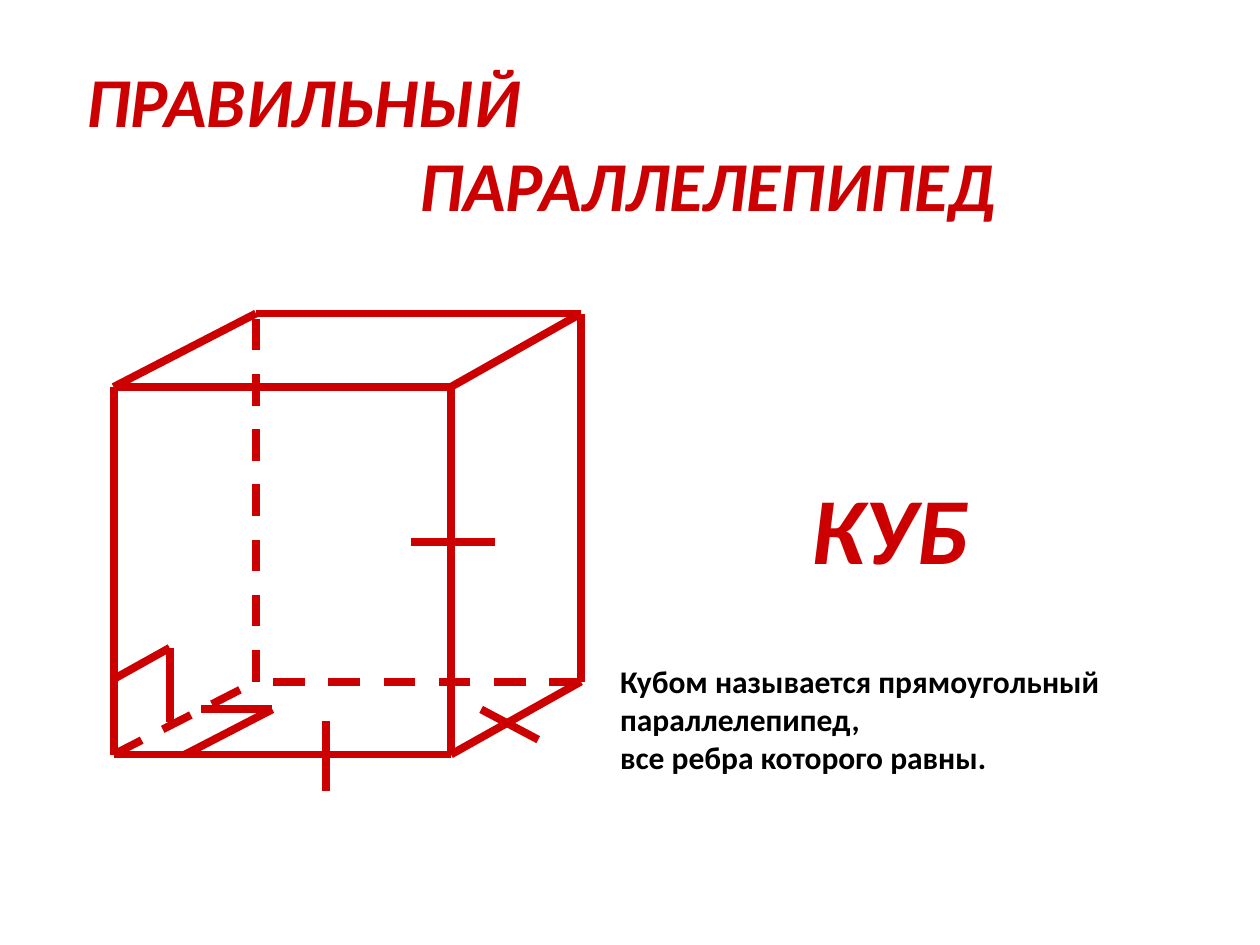
from dataclasses import dataclass

from lxml.etree import SubElement
from pptx import Presentation
from pptx.dml.color import RGBColor
from pptx.enum.dml import MSO_LINE
from pptx.enum.shapes import MSO_CONNECTOR
from pptx.enum.text import MSO_AUTO_SIZE as AutoSize
from pptx.oxml.ns import qn
from pptx.util import Cm, Pt


@dataclass(frozen=True)
class Theme:
    font: str = "Calibri"
    red: RGBColor = RGBColor(0xCC, 0x00, 0x00)
    black: RGBColor = RGBColor(0x00, 0x00, 0x00)
    title_size: int = 40
    name_size: int = 54
    body_size: int = 18
    stroke: float = 4.5


class Page:
    def __init__(self, deck, theme):
        self.theme = theme
        self.slide = deck.slides.add_slide(deck.slide_layouts[6])

    def text(self, frame, lines, size, color, italic=False):
        """Add a text box; lines holds (left indent in cm, wording) pairs."""
        box = self.slide.shapes.add_textbox(*map(Cm, frame))
        body = box.text_frame
        body.word_wrap = True
        body.auto_size = AutoSize.SHAPE_TO_FIT_TEXT
        values = {"name": self.theme.font, "size": Pt(size), "bold": True, "italic": italic}
        for number, (indent, wording) in enumerate(lines):
            para = body.add_paragraph() if number else body.paragraphs[0]
            para.text = wording
            para._p.get_or_add_pPr().set("marL", str(Cm(indent)))
            for span in para.runs:
                for key, value in values.items():
                    setattr(span.font, key, value)
                span.font.color.rgb = color

    def drawing(self, solid, dashed):
        """Add one group of straight lines, each given by its two end points."""
        group = self.slide.shapes.add_group_shape()
        for segments, dash in ((dashed, MSO_LINE.DASH), (solid, None)):
            for start, end in segments:
                self.line(group, start, end, dash)

    def line(self, group, start, end, dash):
        line = group.shapes.add_connector(MSO_CONNECTOR.STRAIGHT, *map(Cm, start + end))
        line.line.color.rgb = self.theme.red
        line.line.width = Pt(self.theme.stroke)
        if dash:
            line.line.dash_style = dash
        SubElement(line._element.spPr, qn("a:effectLst"))


def rectangle(left, top, right, bottom):
    """Corners in order: top left, top right, bottom right, bottom left."""
    return [(left, top), (right, top), (right, bottom), (left, bottom)]


def cube_edges():
    """Return the visible and the hidden edges of the cube."""
    front = rectangle(2.29, 7.8, 9.09, 15.21)
    back = rectangle(5.16, 6.32, 11.71, 13.74)
    hidden_corner = back[3]
    edges = list(zip(front, back))
    for face in (front, back):
        edges += zip(face, face[1:] + face[:1])
    hidden = [edge for edge in edges if hidden_corner in edge]
    visible = [edge for edge in edges if hidden_corner not in edge]
    return visible, hidden


def main():
    deck = Presentation()
    deck.slide_width, deck.slide_height = Cm(25.4), Cm(19.05)
    theme = Theme()
    page = Page(deck, theme)

    page.text((1.5, 1.04, 23.93, 3.68),
              [(0, "ПРАВИЛЬНЫЙ"), (6.7, "ПАРАЛЛЕЛЕПИПЕД")],
              theme.title_size, theme.red, italic=True)

    visible, hidden = cube_edges()
    equal_marks = [((6.58, 14.53), (6.58, 15.95)),
                   ((9.7, 14.3), (10.85, 14.91)),
                   ((8.28, 10.92), (9.98, 10.92))]
    right_angles = [((4.06, 14.3), (5.49, 14.3)), ((5.49, 14.3), (3.73, 15.21)),
                    ((2.29, 13.69), (3.42, 13.06)), ((3.42, 13.06), (3.42, 14.55))]
    page.drawing(visible + equal_marks + right_angles, hidden)

    page.text((13.11, 9.35, 11.61, 2.57), [(3, "КУБ")],
              theme.name_size, theme.red, italic=True)
    page.text((12.12, 13.23, 12.7, 2.57),
              [(0.13, "Кубом называется прямоугольный параллелепипед,\v"
                      "все ребра которого равны.")],
              theme.body_size, theme.black)
    deck.save("out.pptx")


if __name__ == "__main__":
    main()
